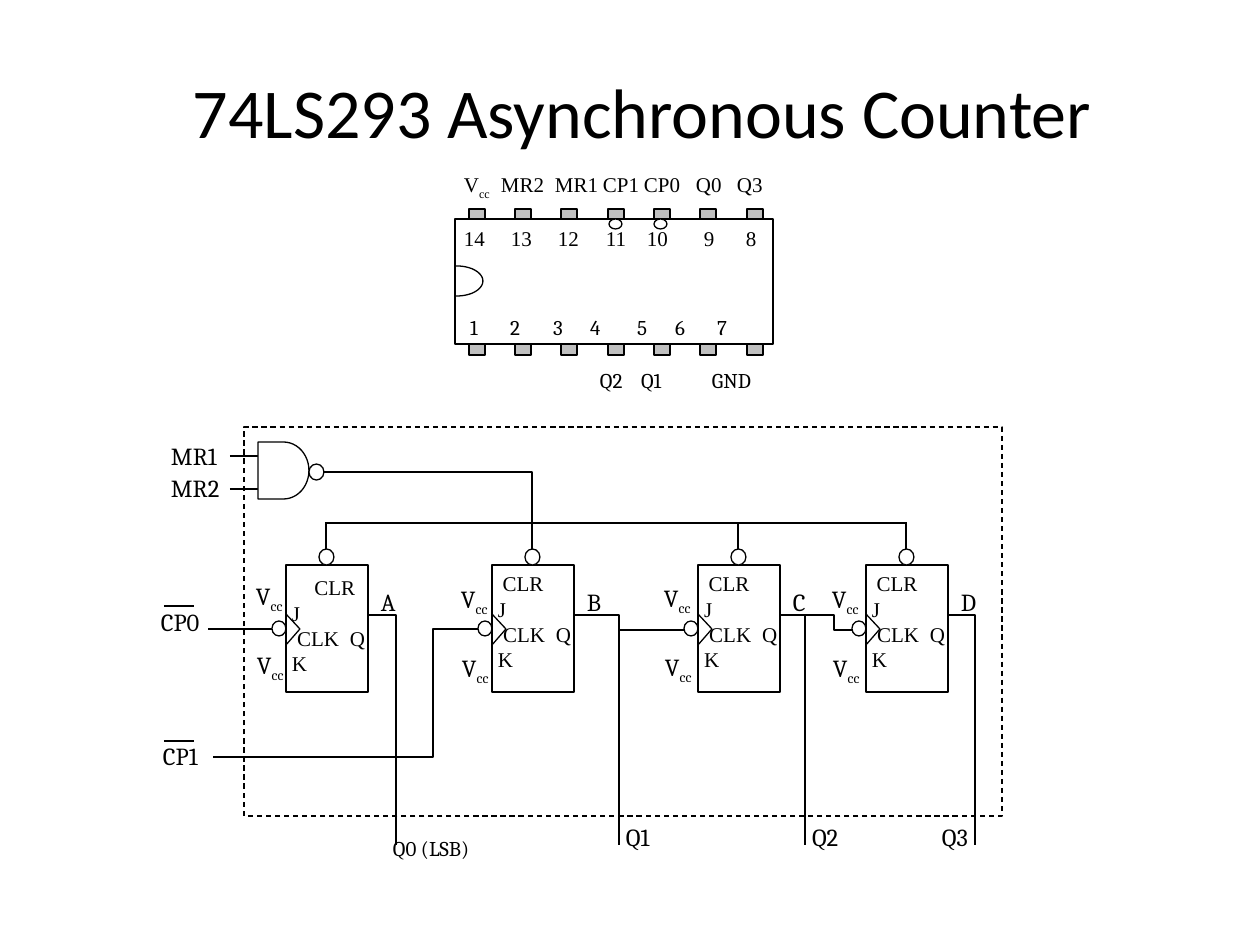
import math

from lxml import etree
from pptx import Presentation
from pptx import util as u
from pptx.dml.color import RGBColor
from pptx.enum import dml, shapes, text
from pptx.oxml.ns import qn

BLACK = RGBColor(0x00, 0x00, 0x00)
WHITE = RGBColor(0xFF, 0xFF, 0xFF)
GREY = RGBColor(0xC0, 0xC0, 0xC0)
SERIF, TIMES, SANS = "Cambria", "Times New Roman", "Calibri"
KIND = shapes.MSO_SHAPE


def px(n):
    return round(n * 914400 / 126)


def write(p, txt, size=14, font=SERIF, tabs=(), left=0, align=None):
    """Add text to a paragraph; parts between bars are subscript."""
    p.alignment = align
    pPr = p._p.get_or_add_pPr()
    if left:
        pPr.set("marL", str(px(left)))
    if tabs:
        lst = etree.SubElement(pPr, qn("a:tabLst"))
        for t in tabs:
            etree.SubElement(lst, qn("a:tab"), pos=str(px(t)), algn="l")
    for i, part in enumerate(txt.split("|")):
        r = p.add_run()
        r.text = part
        r.font.size, r.font.name = u.Pt(size), font
        r.font.color.rgb = BLACK
        if i % 2:
            r._r.get_or_add_rPr().set("baseline", "-25000")


class Diagram:
    def __init__(self, s):
        self.s = s

    def style(self, sp, fill=None):
        sp.shadow.inherit = False
        if fill is None:
            sp.fill.background()
        else:
            sp.fill.solid()
            sp.fill.fore_color.rgb = fill
        sp.line.color.rgb = BLACK
        sp.line.width = u.Pt(0.75)
        return sp

    def frame(self, sp, insets):
        tf = sp.text_frame
        tf.word_wrap = True
        tf.vertical_anchor = text.MSO_ANCHOR.TOP
        tf.margin_left, tf.margin_top, tf.margin_right, tf.margin_bottom = map(px, insets)
        return tf

    def title(self, txt, x, y, w, h):
        sp = self.s.shapes.title
        sp.left, sp.top, sp.width, sp.height = map(px, (x, y, w, h))
        tf = self.frame(sp, (13, 6, 13, 6))
        write(tf.paragraphs[0], txt, size=40, font=SANS, align=text.PP_ALIGN.CENTER)

    def shape(self, kind, x, y, w, h, fill=WHITE):
        sp = self.s.shapes.add_shape(kind, *map(px, (x, y, w, h)))
        return self.style(sp, fill)

    def bubble(self, x, y, w=15, h=16):
        return self.shape(KIND.OVAL, x, y, w, h)

    def path_line(self, *pts):
        pts = [(px(x), px(y)) for x, y in pts]
        fb = self.s.shapes.build_freeform(*pts[0], scale=1.0)
        fb.add_line_segments(pts[1:], close=False)
        return self.style(fb.convert_to_shape())

    def line(self, x1, y1, x2, y2):
        c = self.s.shapes.add_connector(
            shapes.MSO_CONNECTOR.STRAIGHT, *map(px, (x1, y1, x2, y2)))
        c.line.color.rgb = BLACK
        c.line.width = u.Pt(0.75)
        etree.SubElement(c._element.spPr, qn("a:effectLst"))

    def label(self, txt, x, y, w, h, pad=(1, 1, 1, 1), **fmt):
        sp = self.s.shapes.add_textbox(*map(px, (x, y, w, h)))
        write(self.frame(sp, pad).paragraphs[0], txt, **fmt)

    def flip_flop(self, x, y, clr_left, clr_size):
        sp = self.shape(KIND.RECTANGLE, x, y, 82, 127)
        tf = self.frame(sp, (6, 6, 1, 6))
        left = text.PP_ALIGN.LEFT
        p = tf.paragraphs[0]
        write(p, " ", size=clr_size, left=clr_left, align=left)
        write(p, "CLR", size=12, font=TIMES, left=clr_left, align=left)
        for txt, tabs in (("J", ()), (" CLK\tQ", (58,)), ("K", ())):
            write(tf.add_paragraph(), txt, size=12, font=TIMES, tabs=tabs, align=left)
        # Clock edge mark, clock bubble and clear input
        self.path_line((x, 614), (x + 14, 629), (x, 645))
        self.bubble(x - 14, 621, 14, 15)
        self.line(x + 40, 524, x + 40, 563)
        self.bubble(x + 33, 549)


def draw_chip(d):
    pad = (13, 6, 13, 6)
    for i in range(7):
        d.shape(KIND.RECTANGLE, 469 + 278 * i // 6, 209, 16, 146, GREY)
    d.shape(KIND.RECTANGLE, 455, 219, 318, 125)
    angles = [math.radians(a) for a in range(-90, 91, 6)]
    d.path_line((455, 266), *((457 + 26 * math.cos(a), 281 + 15 * math.sin(a))
                              for a in angles), (455, 296))
    for x in (609, 654):
        d.bubble(x, 219, 13, 10)

    # Pin numbers and names
    rows = (
        ("V|cc|\tMR2\tMR1\tCP1\tCP0\tQ0\tQ3", 451, 166, 328, TIMES,
         (37, 91, 139, 180, 232, 273)),
        ("14\t13\t12\t11\t10\t9\t8", 451, 220, 328, TIMES, (47, 94, 142, 183, 240, 282)),
        ("1\t2\t3\t4\t5\t6\t7", 457, 309, 333, SERIF, (40, 83, 120, 167, 205, 247)),
        ("Q2\tQ1\tGND", 587, 362, 222, SERIF, (41, 112)),
    )
    for txt, x, y, w, font, tabs in rows:
        d.label(txt, x, y, w, 37, pad=pad, size=12, font=font, tabs=tabs)


def draw_circuit(d):
    # Wires between stages
    d.path_line((213, 757), (433, 757), (433, 629), (498, 629))
    d.path_line((619, 615), (619, 630), (695, 630))
    d.path_line((799, 615), (834, 615), (834, 630), (874, 630))
    d.line(286, 629, 208, 629)

    # Reset gate
    for y in (456, 489):
        d.line(230, y, 281, y)
    d.path_line((302, 472), (532, 472), (532, 557))
    d.shape(KIND.FLOWCHART_DELAY, 258, 442, 51, 57)
    d.bubble(309, 464)
    d.line(325, 523, 907, 523)

    # Flip-flops: left edge, supply label position, output name, output drop
    stages = (
        (286, 255, 580, "A", 396),
        (492, 460, 583, "B", 619),
        (698, 663, 582, "C", 805),
        (866, 831, 583, "D", 975),
    )
    for i, (x, vx, vy, name, drop) in enumerate(stages):
        clr_left, clr_size = (17, 14) if i == 0 else (0, 12)
        d.path_line((x + 82, 615), (drop, 615), (drop, 845))
        d.flip_flop(x, 565, clr_left, clr_size)
        d.label(name, x + 94, 586, 25, 28)
        for dx, dy in ((0, 0), (1, 69)):
            d.label("V|cc|", vx + dx, vy + dy, 35, 24)

    # Inputs, with bars over the clocks
    d.label("MR1", 170, 440, 69, 33)
    d.label("MR2", 170, 472, 63, 35)
    for txt, x, y, bar in (("CP0", 160, 606, 606), ("CP1", 162, 740, 741)):
        d.label(txt, x, y, 48, 34)
        d.line(164, bar, 194, bar)

    # Package outline and outputs
    box = d.shape(KIND.RECTANGLE, 244, 427, 758, 389, None)
    box.line.dash_style = dml.MSO_LINE.DASH
    pad = (13, 6, 13, 6)
    d.label("Q0 (LSB)", 380, 830, 107, 76, pad=pad, size=12)
    for txt, x in (("Q1", 613), ("Q2", 799), ("Q3", 929)):
        d.label(txt, x, 816, 70, 47, pad=pad)


def main():
    prs = Presentation()
    prs.slide_width, prs.slide_height = u.Inches(10), u.Inches(7.5)
    d = Diagram(prs.slides.add_slide(prs.slide_layouts[5]))
    d.title("74LS293 Asynchronous Counter", 175, 62, 934, 97)
    draw_chip(d)
    draw_circuit(d)
    prs.save("out.pptx")


if __name__ == "__main__":
    main()
